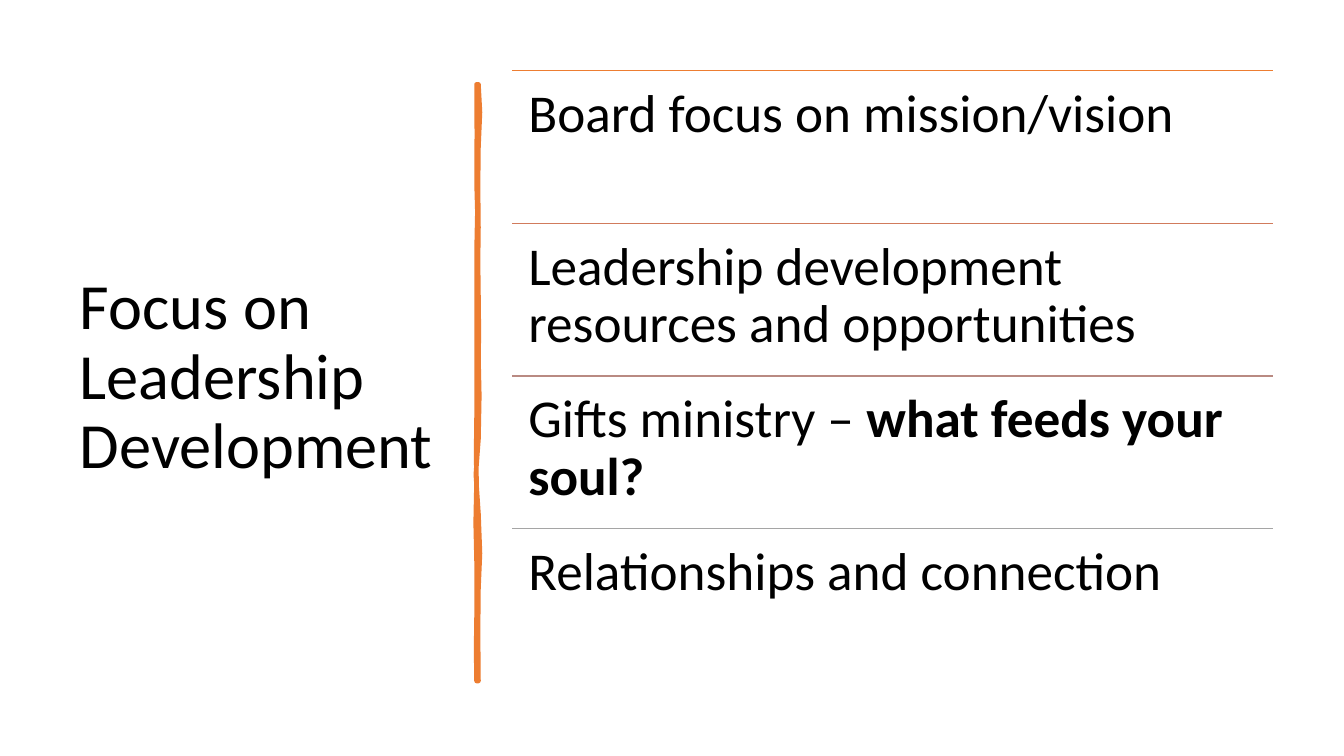
from dataclasses import dataclass

from lxml.etree import SubElement
from pptx import Presentation
from pptx.dml.color import RGBColor
from pptx.enum.shapes import MSO_CONNECTOR
from pptx.enum.text import MSO_ANCHOR
from pptx.oxml.ns import qn
from pptx.slide import Slide
from pptx.util import Pt

FONT = "Calibri"
BLACK = "000000"
ORANGE = "ED7D31"


@dataclass
class Box:
    left: float
    top: float
    width: float
    height: float


@dataclass
class FocusPoint:
    rule_color: str
    plain: str
    bold: str = ""


TITLE_BOX = Box(50, 50.4, 269.3, 440)
LIST_BOX = Box(366, 50.5, 543.5, 436)

FOCUS_POINTS = [
    FocusPoint(ORANGE, "Board focus on mission/vision"),
    FocusPoint("D17B5C", "Leadership development resources and opportunities"),
    FocusPoint("B98A82", "Gifts ministry – ", "what feeds your soul?"),
    FocusPoint("A5A5A5", "Relationships and connection"),
]

# Hand-drawn divider, drawn level and turned upright:
# distance down the slide, and offset from the centre line
DIVIDER_X, DIVIDER_Y = 341.3, 273.6
DIVIDER_OUTLINE = [
    (60.5, -0.7), (80.4, -1.8), (105.1, -0.7), (133.5, -0.4),
    (162.7, -0.7), (186.9, -0.4), (211.7, -0.7), (238.6, -1),
    (256.3, -0.7), (283, -1.3), (313.9, -0.7), (339.2, 1.2),
    (367.2, -0.7), (395.5, -1.8), (420.5, -0.7), (451.7, -0.4),
    (486.7, -0.7), (486.7, 0.7), (464.3, 1), (441.4, 0.7),
    (401, 0.7), (373.6, 1.3), (343.4, 0.7), (324.4, 1),
    (298.8, 0.7), (241.2, 0.7), (180, 0.7), (151.7, 0.1),
    (130.3, 0.7), (96, 0.5), (60.5, 0.7),
]


def color(hex_value: str) -> RGBColor:
    return RGBColor.from_string(hex_value)


def add_divider(slide: Slide) -> None:
    start, *rest = [
        (Pt(DIVIDER_X - DIVIDER_Y + down), Pt(DIVIDER_Y + offset))
        for down, offset in DIVIDER_OUTLINE
    ]
    builder = slide.shapes.build_freeform(*start, scale=1.0)
    builder.add_line_segments(rest, close=True)
    divider = builder.convert_to_shape()
    divider.rotation = 90
    divider.shadow.inherit = False
    divider.line.width = Pt(3.25)
    for paint in (divider.fill, divider.line.fill):
        paint.solid()
        paint.fore_color.rgb = color(ORANGE)


def add_rule(slide: Slide, row: Box, hex_value: str) -> None:
    rule = slide.shapes.add_connector(
        MSO_CONNECTOR.STRAIGHT, Pt(row.left), Pt(row.top),
        Pt(row.left + row.width), Pt(row.top))
    rule.line.width = Pt(1)
    rule.line.color.rgb = color(hex_value)
    SubElement(rule.element.spPr, qn("a:effectLst"))


def add_text(slide: Slide, box: Box, size: float, anchor: MSO_ANCHOR,
             inset: tuple[float, float], plain: str, bold: str = "") -> None:
    words = slide.shapes.add_textbox(
        Pt(box.left), Pt(box.top), Pt(box.width), Pt(box.height)).text_frame
    across, down = Pt(inset[0]), Pt(inset[1])
    frame_format = {
        "word_wrap": True, "vertical_anchor": anchor,
        "margin_left": across, "margin_right": across,
        "margin_top": down, "margin_bottom": down,
    }
    for attribute, value in frame_format.items():
        setattr(words, attribute, value)
    paragraph = words.paragraphs[0]
    paragraph.line_spacing = 0.9
    for part, is_bold in ((plain, False), (bold, True)):
        if part:
            run = paragraph.add_run()
            run.text = part
            font_format = {"name": FONT, "size": Pt(size), "bold": is_bold}
            for attribute, value in font_format.items():
                setattr(run.font, attribute, value)
            run.font.color.rgb = color(BLACK)


def main() -> None:
    deck = Presentation()
    deck.slide_width, deck.slide_height = Pt(960), Pt(540)
    slide = deck.slides.add_slide(deck.slide_layouts[6])

    # Title on the left
    add_text(slide, TITLE_BOX, 46, MSO_ANCHOR.MIDDLE, (7.2, 3.6),
             "Focus on Leadership Development")

    # Divider between title and list
    add_divider(slide)

    # Ruled list on the right
    row_height = LIST_BOX.height / len(FOCUS_POINTS)
    for index, point in enumerate(FOCUS_POINTS):
        row = Box(LIST_BOX.left, LIST_BOX.top + index * row_height,
                  LIST_BOX.width, row_height)
        add_rule(slide, row, point.rule_color)
        add_text(slide, row, 38, MSO_ANCHOR.TOP, (11.4, 11.4),
                 point.plain, point.bold)

    deck.save("out.pptx")


if __name__ == "__main__":
    main()
